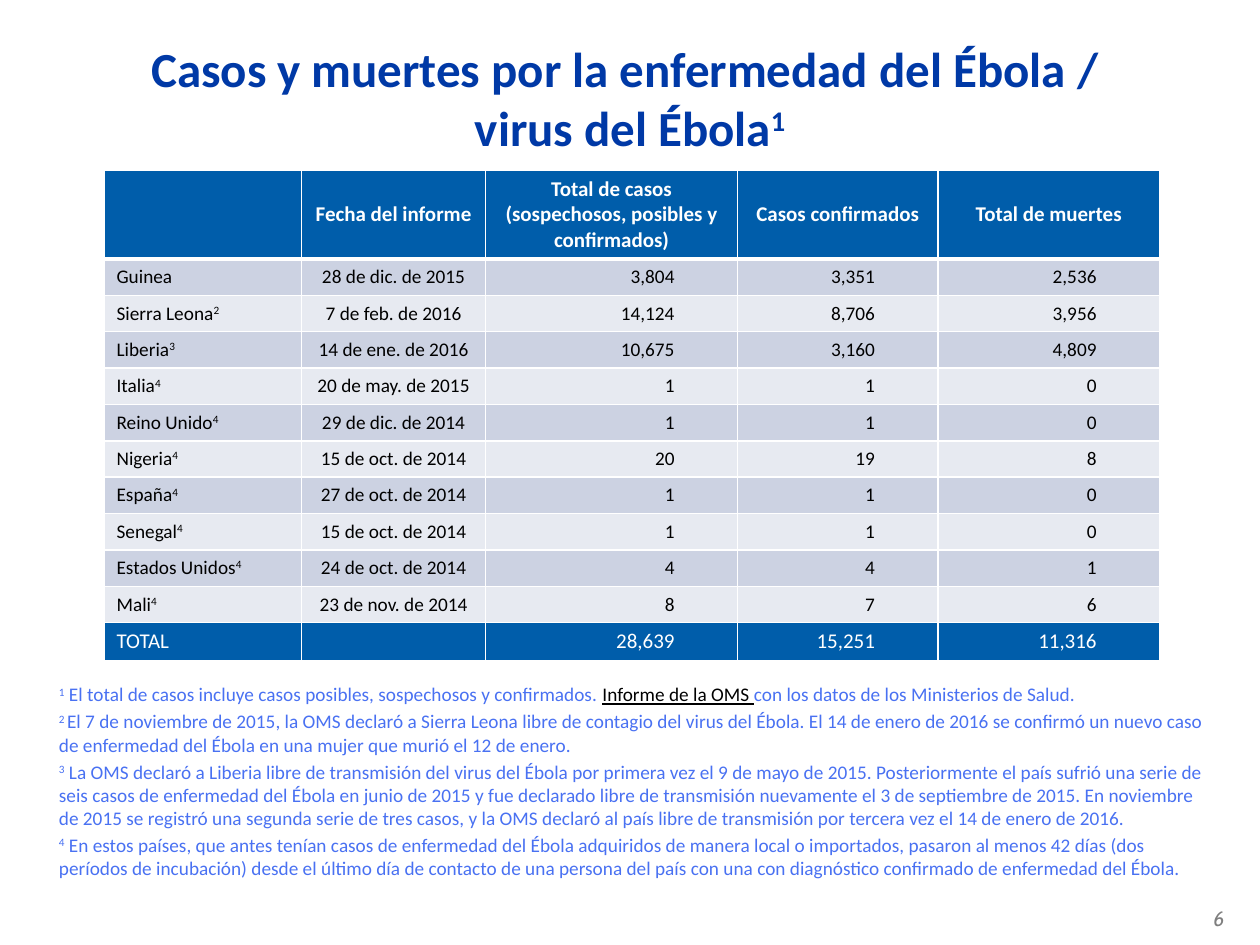
from dataclasses import dataclass

from lxml.etree import SubElement
from pptx import Presentation
from pptx.dml.color import RGBColor
from pptx.enum.text import MSO_ANCHOR, PP_ALIGN
from pptx.oxml.ns import qn
from pptx.util import Pt


@dataclass(frozen=True)
class Theme:
    """Colours, fonts and type sizes of the slide."""
    title: str = "0039A6"
    note: str = "4971F2"
    link: str = "000000"
    number: str = "7F7F7F"
    text: str = "000000"
    white: str = "FFFFFF"
    header: str = "005DAA"
    bands: tuple = ("CCD2E2", "E7EAF1")
    font: str = "Calibri"
    number_font: str = "Cabin"
    title_size: int = 28
    strong_size: int = 12
    body_size: int = 11


THEME = Theme()
COLUMN_WIDTHS = (113, 105.1, 144, 114.5, 126.7)
HEADER_HEIGHT, ROW_HEIGHT = 50.8, 20.8
HEADINGS = ("", "Fecha del informe", "Total de casos (sospechosos, posibles y confirmados)",
            "Casos confirmados", "Total de muertes")
COUNTRIES = (
    ("Guinea", "28 de dic. de 2015", "3,804", "3,351", "2,536"),
    ("Sierra Leona^2", "7 de feb. de 2016", "14,124", "8,706", "3,956"),
    ("Liberia^3", "14 de ene. de 2016", "10,675", "3,160", "4,809"),
    ("Italia^4", "20 de may. de 2015", "1", "1", "0"),
    ("Reino Unido^4", "29 de dic. de 2014", "1", "1", "0"),
    ("Nigeria^4", "15 de oct. de 2014", "20", "19", "8"),
    ("España^4", "27 de oct. de 2014", "1", "1", "0"),
    ("Senegal^4", "15 de oct. de 2014", "1", "1", "0"),
    ("Estados Unidos^4", "24 de oct. de 2014", "4", "4", "1"),
    ("Mali^4", "23 de nov. de 2014", "8", "7", "6"),
)
TOTALS = ("TOTAL", "", "28,639", "15,251", "11,316")
NOTES = (
    (("1", "raised"),
     (" El total de casos incluye casos posibles, sospechosos y confirmados. ", "plain"),
     ("Informe de la OMS ", "link"),
     ("con los datos de los Ministerios de Salud.", "plain")),
    (("2 ", "raised"),
     ("El 7 de noviembre de 2015, la OMS declaró a Sierra Leona libre de contagio del virus "
      "del Ébola. El 14 de enero de 2016 se confirmó un nuevo caso de enfermedad del Ébola en "
      "una mujer que murió el 12 de enero.", "plain")),
    (("3", "raised"),
     (" La OMS declaró a Liberia libre de transmisión del virus del Ébola por primera vez el 9 "
      "de mayo de 2015. Posteriormente el país sufrió una serie de seis casos de enfermedad del "
      "Ébola en junio de 2015 y fue declarado libre de transmisión nuevamente el 3 de septiembre "
      "de 2015. En noviembre de 2015 se registró una segunda serie de tres casos, y la OMS "
      "declaró al país libre de transmisión por tercera vez el 14 de enero de 2016.", "plain")),
    (("4", "raised"),
     (" En estos países, que antes tenían casos de enfermedad del Ébola adquiridos de manera "
      "local o importados, pasaron al menos 42 días (dos períodos de incubación) desde el último "
      "día de contacto de una persona del país con una con diagnóstico confirmado de enfermedad "
      "del Ébola.", "plain")),
)


def set_values(target, values):
    """Set each attribute named in a dict on the target."""
    for name, value in values.items():
        setattr(target, name, value)


def add_run(paragraph, text, size, color, raised=False, **values):
    """Add a formatted run, raised when it is a note mark."""
    run = paragraph.add_run()
    run.text = text
    set_values(run.font, {"name": THEME.font, "size": Pt(size), "bold": False, **values})
    run.font.color.rgb = RGBColor.from_string(color)
    if raised:
        run._r.get_or_add_rPr().set("baseline", "30000")


def add_text_box(slide, left, top, width, height, **values):
    """Add a wrapping text box and return its text frame."""
    frame = slide.shapes.add_textbox(Pt(left), Pt(top), Pt(width), Pt(height)).text_frame
    set_values(frame, {"word_wrap": True, **values})
    return frame


def add_title(slide):
    """Add the two-line heading with its note mark."""
    frame = add_text_box(slide, 24, 34.5, 672, 42, vertical_anchor=MSO_ANCHOR.MIDDLE)
    paragraph = frame.paragraphs[0]
    paragraph.alignment = PP_ALIGN.CENTER
    style = {"size": THEME.title_size, "color": THEME.title, "bold": True}
    add_run(paragraph, "Casos y muertes por la enfermedad del Ébola / ", **style)
    paragraph.add_line_break()
    add_run(paragraph, "virus del Ébola", **style)
    add_run(paragraph, "1", raised=True, **style)


def add_notes(slide):
    """Add the numbered notes under the table."""
    frame = add_text_box(slide, 26.6, 386.6, 669, 117.4)
    for index, pieces in enumerate(NOTES):
        paragraph = frame.add_paragraph() if index else frame.paragraphs[0]
        if index:
            paragraph.space_before = Pt(THEME.body_size * 0.2)
        for text, kind in pieces:
            color = THEME.link if kind == "link" else THEME.note
            add_run(paragraph, text, THEME.body_size, color, kind == "raised",
                    underline=kind == "link")


def add_slide_number(slide):
    """Add the slide number in the lower right corner."""
    margins = dict.fromkeys(("margin_left", "margin_top", "margin_right", "margin_bottom"), Pt(3.6))
    frame = add_text_box(slide, 689.8, 514, 28.8, 21.6, **margins)
    add_run(frame.paragraphs[0], "6", THEME.strong_size, THEME.number,
            name=THEME.number_font, italic=True)


def set_borders(cell, top, bottom):
    """Draw the white borders of a cell, with widths in points."""
    properties = cell._tc.get_or_add_tcPr()
    for side, width in (("L", 1), ("R", 1), ("T", top), ("B", bottom)):
        line = SubElement(properties, qn(f"a:ln{side}"), w=str(Pt(width)))
        fill = SubElement(line, qn("a:solidFill"))
        SubElement(fill, qn("a:srgbClr"), val=THEME.white)


def fill_cell(cell, text, fill, alignment, size, color, bold):
    """Fill a cell and write its text, with a note mark after a caret."""
    cell.fill.solid()
    cell.fill.fore_color.rgb = RGBColor.from_string(fill)
    cell.vertical_anchor = MSO_ANCHOR.MIDDLE
    if alignment == PP_ALIGN.RIGHT:
        cell.margin_right = Pt(36)
    paragraph = cell.text_frame.paragraphs[0]
    paragraph.alignment = alignment
    label, _, mark = text.partition("^")
    if label:
        add_run(paragraph, label, size, color, bold=bold)
    else:
        SubElement(paragraph._p, qn("a:endParaRPr"), sz=str(size * 100))
    if mark:
        add_run(paragraph, mark, size, color, raised=True, bold=bold)


def add_case_table(slide):
    """Add the table of cases and deaths by country."""
    rows = (HEADINGS, *COUNTRIES, TOTALS)
    last = len(rows) - 1
    table = slide.shapes.add_table(len(rows), len(COLUMN_WIDTHS), Pt(59.4), Pt(97.2),
                                   Pt(sum(COLUMN_WIDTHS)),
                                   Pt(HEADER_HEIGHT + last * ROW_HEIGHT)).table
    set_values(table, {"first_row": False, "horz_banding": False})
    for column, width in zip(table.columns, COLUMN_WIDTHS):
        column.width = Pt(width)
    alignments = (PP_ALIGN.LEFT, PP_ALIGN.CENTER) + (PP_ALIGN.RIGHT,) * 3
    for row, texts in enumerate(rows):
        table.rows[row].height = Pt(ROW_HEIGHT if row else HEADER_HEIGHT)
        strong = row in (0, last)
        fill = THEME.header if strong else THEME.bands[(row - 1) % 2]
        size = THEME.strong_size if strong else THEME.body_size
        color = THEME.white if strong else THEME.text
        for column, text in enumerate(texts):
            cell = table.cell(row, column)
            set_borders(cell, 3 if row == 1 else 1, 3 if row == 0 else 1)
            alignment = alignments[column] if row else PP_ALIGN.CENTER
            fill_cell(cell, text, fill, alignment, size, color, row == 0)


def main():
    """Build the slide and save it."""
    presentation = Presentation()
    set_values(presentation, {"slide_width": Pt(720), "slide_height": Pt(540)})
    slide = presentation.slides.add_slide(presentation.slide_layouts[6])
    add_title(slide)
    add_notes(slide)
    add_slide_number(slide)
    add_case_table(slide)
    presentation.save("out.pptx")


if __name__ == "__main__":
    main()
